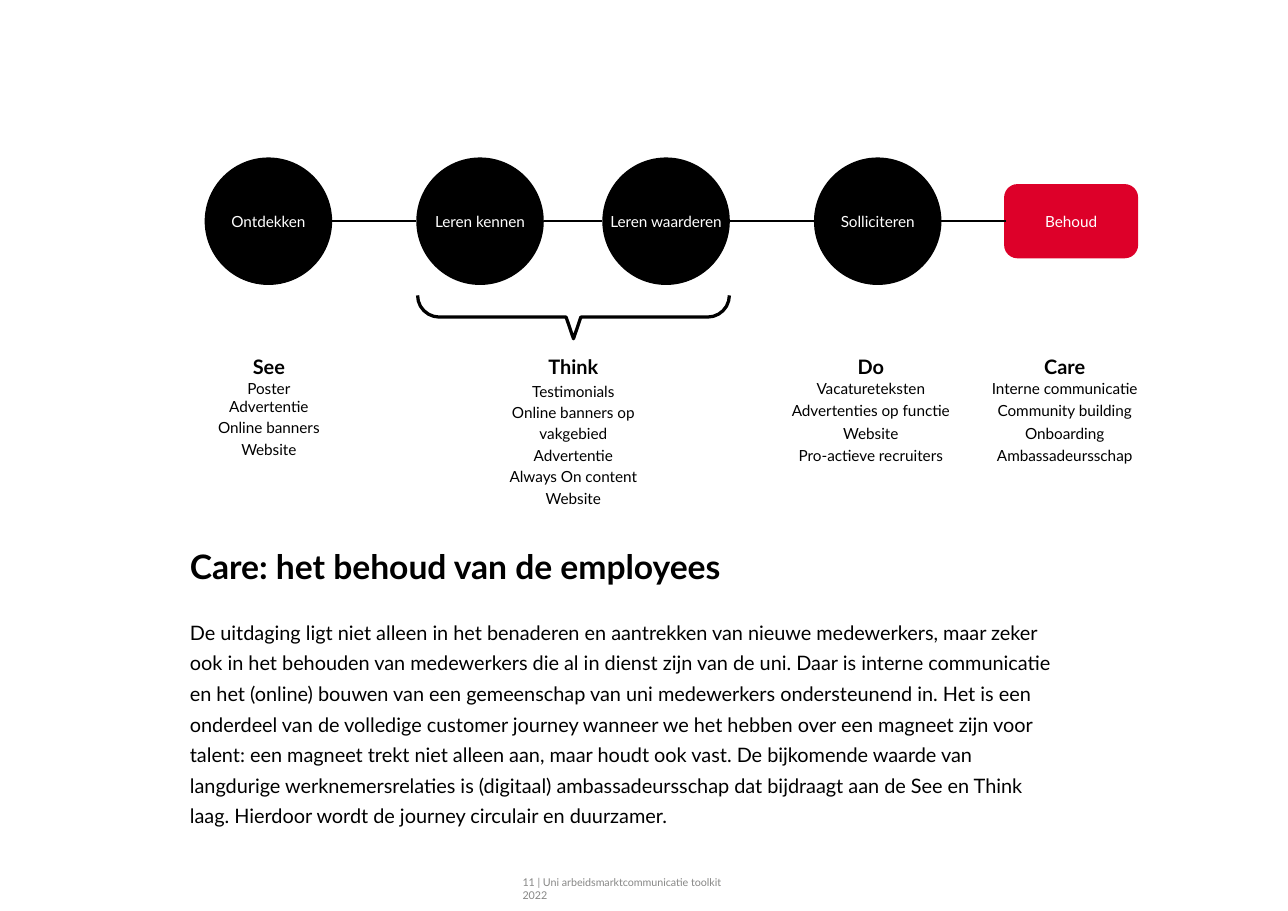
import math

import pptx
import pptx.dml.color
import pptx.enum.shapes
import pptx.enum.text
import pptx.oxml.ns
import pptx.util
from lxml import etree

Cm = pptx.util.Cm
Pt = pptx.util.Pt
RGBColor = pptx.dml.color.RGBColor
Shape = pptx.enum.shapes.MSO_SHAPE
Align = pptx.enum.text.PP_ALIGN
Anchor = pptx.enum.text.MSO_ANCHOR

BLACK = RGBColor(0x00, 0x00, 0x00)
WHITE = RGBColor(0xFF, 0xFF, 0xFF)
RED = RGBColor(0xDD, 0x00, 0x29)
GREY = RGBColor(0x87, 0x87, 0x86)
FONT = "Lato"

# All plain numbers below are centimetres.
AXIS_Y = 5.1
DIAMETER = 2.94
TEXT_LEFT, TEXT_WIDTH = 4.38, 20.13

STEPS = [
    ("Ontdekken", 4.72),
    ("Leren kennen", 9.6),
    ("Leren waarderen", 13.89),
    ("Solliciteren", 18.77),
]

# Heading, centre, width, line pitch in points, lines at natural pitch, items
PHASES = [
    ("See", 6.2, 3.7, 14, 2,
     ["Poster", "Advertentie", "Online banners", "Website"]),
    ("Think", 13.22, 4.2, 14, 0,
     ["Testimonials", "Online banners op vakgebied", "Advertentie",
      "Always On content", "Website"]),
    ("Do", 20.08, 4.34, 14.8, 1,
     ["Vacatureteksten", "Advertenties op functie", "Website",
      "Pro-actieve recruiters"]),
    ("Care", 24.55, 4.04, 14.8, 1,
     ["Interne communicatie", "Community building", "Onboarding",
      "Ambassadeursschap"]),
]

TITLE = "Care: het behoud van de employees"
BODY = (
    "De uitdaging ligt niet alleen in het benaderen en aantrekken van nieuwe "
    "medewerkers, maar zeker ook in het behouden van medewerkers die al in "
    "dienst zijn van de uni. Daar is interne communicatie en het (online) "
    "bouwen van een gemeenschap van uni medewerkers ondersteunend in. Het is "
    "een onderdeel van de volledige customer journey wanneer we het hebben "
    "over een magneet zijn voor talent: een magneet trekt niet alleen aan, "
    "maar houdt ook vast. De bijkomende waarde van langdurige "
    "werknemersrelaties is (digitaal) ambassadeursschap dat bijdraagt aan de "
    "See en Think laag. Hierdoor wordt de journey circulair en duurzamer."
)
FOOTER = "11 | Uni arbeidsmarktcommunicatie toolkit 2022"


def write(text_frame, text, size=10, bold=False, color=BLACK,
          align=Align.LEFT, line_spacing=1.0):
    """Fill the empty first paragraph, or add a paragraph after the others."""
    paragraph = text_frame.paragraphs[-1]
    if paragraph.runs:
        paragraph = text_frame.add_paragraph()
    paragraph.alignment = align
    paragraph.line_spacing = line_spacing
    paragraph.space_before = Pt(0)
    run = paragraph.add_run()
    run.text = text
    run.font.name = FONT
    run.font.size = Pt(size)
    run.font.bold = bold
    run.font.color.rgb = color


def prepare_frame(text_frame, wrap=True, anchor=Anchor.TOP, top_margin=0):
    text_frame.word_wrap = wrap
    text_frame.auto_size = pptx.enum.text.MSO_AUTO_SIZE.NONE
    text_frame.vertical_anchor = anchor
    text_frame.margin_left = text_frame.margin_right = 0
    text_frame.margin_top, text_frame.margin_bottom = Cm(top_margin), 0


def add_text_box(slide, left, top, width, height, top_margin=0.03):
    box = slide.shapes.add_textbox(Cm(left), Cm(top), Cm(width), Cm(height))
    prepare_frame(box.text_frame, top_margin=top_margin)
    return box.text_frame


def add_step(slide, kind, label, left, width, height, color):
    """Add a labelled step, centred vertically on the journey line."""
    step = slide.shapes.add_shape(
        kind, Cm(left), Cm(AXIS_Y - height / 2), Cm(width), Cm(height))
    step.shadow.inherit = False
    step.fill.solid()
    step.fill.fore_color.rgb = color
    step.line.fill.background()
    prepare_frame(step.text_frame, wrap=False, anchor=Anchor.MIDDLE)
    write(step.text_frame, label, color=WHITE, align=Align.CENTER)
    return step


def add_link(slide, start, end):
    link = slide.shapes.add_connector(
        pptx.enum.shapes.MSO_CONNECTOR.STRAIGHT,
        start.left + start.width, Cm(AXIS_Y), end.left, Cm(AXIS_Y))
    link.line.color.rgb = BLACK
    link.line.width = Pt(1.25)
    properties = link._element.spPr
    etree.SubElement(properties, pptx.oxml.ns.qn("a:effectLst"))
    return link


def add_journey(slide):
    steps = [add_step(slide, Shape.OVAL, label, left, DIAMETER, DIAMETER, BLACK)
             for label, left in STEPS]
    retention = add_step(slide, Shape.ROUNDED_RECTANGLE, "Behoud",
                         23.19, 3.02, 1.64, RED)
    retention.line.color.rgb = RED
    retention.line.width = Pt(2)
    steps.append(retention)
    for start, end in zip(steps, steps[1:]):
        link = add_link(slide, start, end)
    link.end_connect(retention, 1)


def add_bracket(slide, left=9.63, top=6.81, width=7.19, radius=0.5):
    """Add a bracket with rounded ends and a pointer in the middle."""
    angles = [math.radians(degrees) for degrees in range(0, 91, 15)]
    half = [(radius - radius * math.cos(angle), radius * math.sin(angle))
            for angle in angles]
    half.append((width / 2 - 0.17, radius))
    tip = (width / 2, 2 * radius)
    mirrored = [(width - x, y) for x, y in reversed(half)]
    points = [(Cm(left + x), Cm(top + y)) for x, y in half + [tip] + mirrored]
    builder = slide.shapes.build_freeform(*points[0])
    builder.add_line_segments(points[1:], close=False)
    bracket = builder.convert_to_shape()
    bracket.shadow.inherit = False
    bracket.fill.background()
    bracket.line.color.rgb = BLACK
    bracket.line.width = Pt(2.13)


def add_phase(slide, heading, center, width, pitch, natural_lines, items):
    frame = add_text_box(slide, center - width / 2, 8.08, width, 3.1, 0.1)
    write(frame, heading, size=13, bold=True, align=Align.CENTER)
    for index, item in enumerate(items):
        spacing = 1.0 if index < natural_lines else Pt(pitch)
        write(frame, item, align=Align.CENTER, line_spacing=spacing)


def set_title(slide):
    title = slide.shapes.title
    title.left, title.top = Cm(TEXT_LEFT), Cm(12.4)
    title.width, title.height = Cm(TEXT_WIDTH), Cm(1.3)
    prepare_frame(title.text_frame, anchor=Anchor.MIDDLE)
    write(title.text_frame, TITLE, size=22, bold=True)


def main():
    presentation = pptx.Presentation()
    presentation.slide_width = Cm(29.7)
    presentation.slide_height = Cm(21)
    slide = presentation.slides.add_slide(presentation.slide_layouts[5])
    set_title(slide)
    body = add_text_box(slide, TEXT_LEFT, 14.12, TEXT_WIDTH, 5)
    write(body, BODY, size=13, line_spacing=1.28)
    footer = add_text_box(slide, 12.05, 20.17, 5, 0.65)
    write(footer, FOOTER, size=7, color=GREY)
    add_journey(slide)
    add_bracket(slide)
    for phase in PHASES:
        add_phase(slide, *phase)
    presentation.save("out.pptx")


if __name__ == "__main__":
    main()
